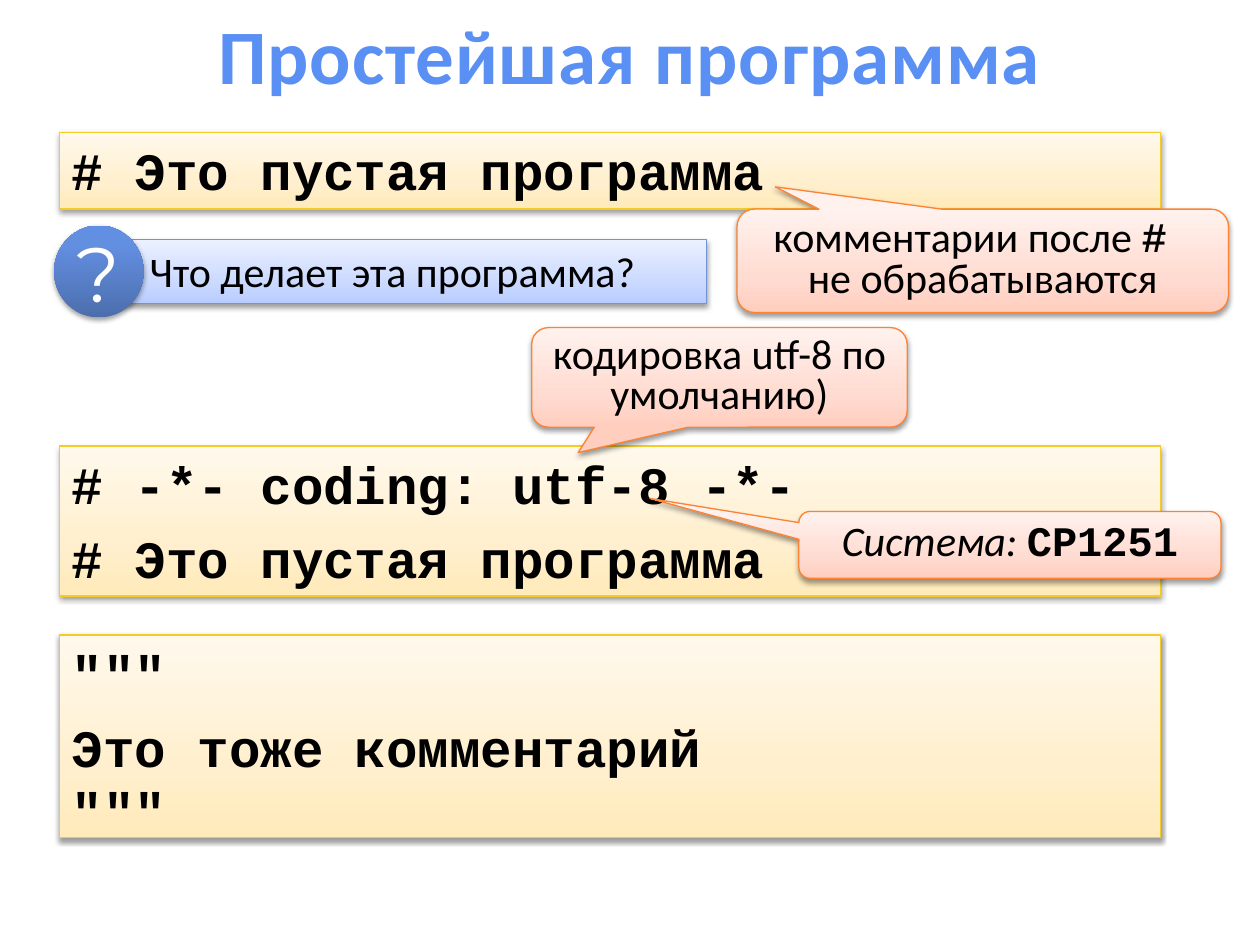
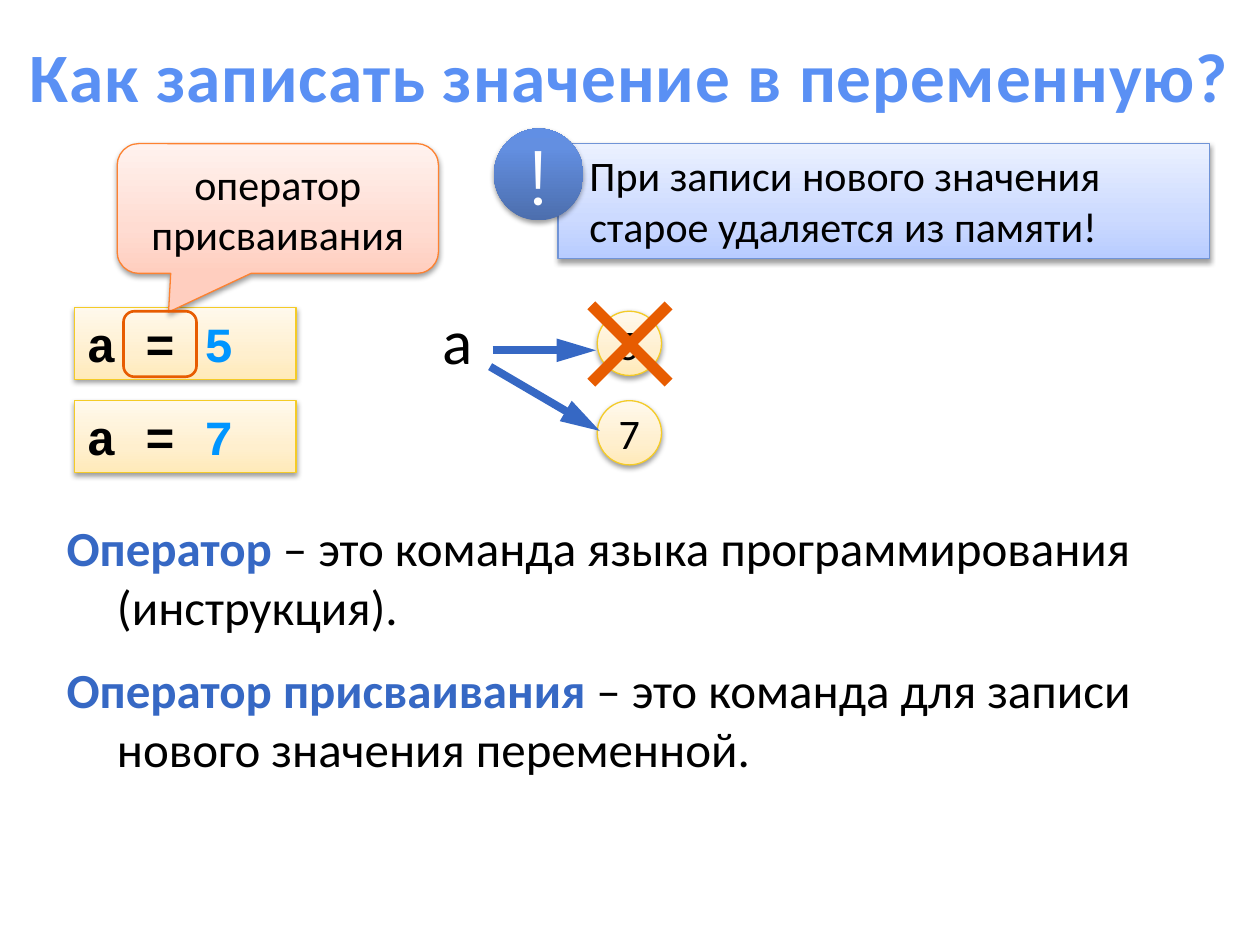
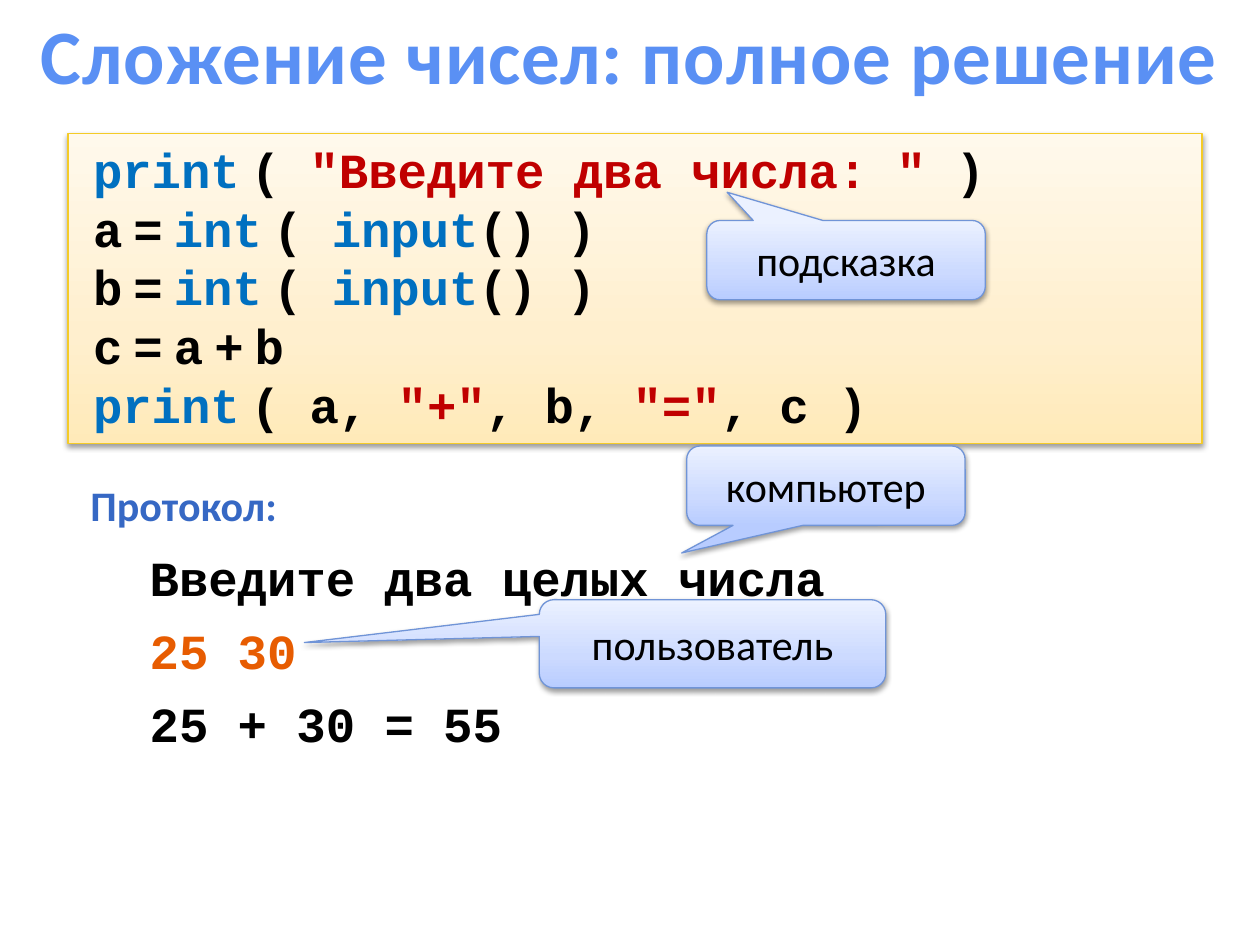
import dataclasses

import lxml.etree
import pptx
import pptx.dml.color
import pptx.enum.shapes
import pptx.enum.text
import pptx.oxml.ns
import pptx.util

Inches = pptx.util.Inches
Pt = pptx.util.Pt
qn = pptx.oxml.ns.qn
SHAPE = pptx.enum.shapes.MSO_SHAPE
ALIGN = pptx.enum.text.PP_ALIGN
ANCHOR = pptx.enum.text.MSO_ANCHOR


@dataclasses.dataclass(frozen=True)
class Theme:
    # Fonts
    body: str = "Calibri"
    code: str = "Courier New"
    badge: str = "Montserrat"
    # Type sizes
    title_size: float = 44
    code_size: float = 30
    text_size: float = 28
    note_size: float = 24
    variable_size: float = 36
    # Colours
    black: str = "000000"
    white: str = "FFFFFF"
    title: str = "5A90F4"
    accent: str = "3668C4"
    orange: str = "E75C01"
    number: str = "0095FF"
    keyword: str = "0070C0"
    string: str = "C00000"
    # Gradients run from bottom to top: (position, colour)
    yellow: tuple = ((0, "FFEAB9"), (35, "FFEFCE"), (100, "FFF9EC"))
    blue: tuple = ((0, "B8CCFF"), (35, "CCDAFF"), (100, "EBF1FF"))
    pink: tuple = ((0, "FFCEBF"), (35, "FFDCD2"), (100, "FFF2EE"))
    disc: tuple = ((0, "4C6EAD"), (80, "638FE1"), (100, "618FE4"))
    yellow_line: str = "F4CB27"
    blue_line: str = "7094D7"
    pink_line: str = "FD8231"


T = Theme()


def rgb(color):
    return pptx.dml.color.RGBColor.from_string(color)


def child(parent, tag, **attrs):
    return lxml.etree.SubElement(parent, qn(tag), {k: str(v) for k, v in attrs.items()})


def pick(values, i):
    """Value for paragraph i; the last one serves all that follow."""
    return values[min(i, len(values) - 1)]


def write(tf, paragraphs, align=ALIGN.LEFT, anchor=ANCHOR.TOP, wrap=True, gaps=(0,),
          margins=(0,), hanging=0, spacing=None, **fmt):
    """Each paragraph is a string or a list of runs: text or (text, format)."""
    tf.word_wrap = wrap
    tf.vertical_anchor = anchor
    for i, runs in enumerate(paragraphs):
        p = tf.paragraphs[0] if i == 0 else tf.add_paragraph()
        p.alignment = align
        p.space_before = Pt(pick(gaps, i))
        if spacing:
            p.line_spacing = spacing
        pPr = p._p.get_or_add_pPr()
        pPr.set("marL", str(Inches(pick(margins, i))))
        pPr.set("indent", str(Inches(-hanging)))
        for run in [runs] if isinstance(runs, str) else runs:
            text, own = (run, {}) if isinstance(run, str) else run
            look = {"font": T.body, "size": T.note_size, "color": T.black, **fmt, **own}
            for n, line in enumerate(text.split("\n")):
                if n:
                    p.add_line_break()
                if line:
                    r = p.add_run()
                    r.text = line
                    r.font.name = look["font"]
                    r.font.size = Pt(look["size"])
                    r.font.color.rgb = rgb(look["color"])
                    r.font.bold = look.get("bold", False)
                    r.font.italic = look.get("italic", False)
                    if "tracking" in look:
                        r._r.get_or_add_rPr().set("spc", str(look["tracking"]))


class Deck:
    def __init__(self):
        self.prs = pptx.Presentation()
        self.prs.slide_width, self.prs.slide_height = Inches(10), Inches(7.5)

    def slide(self, title, top=0, height=0.85, size=T.title_size):
        self.s = self.prs.slides.add_slide(self.prs.slide_layouts[6])
        self.text(0, top, 10, height, [title], align=ALIGN.CENTER, anchor=ANCHOR.MIDDLE,
                  size=size, color=T.title, bold=True, tracking=50)

    def text(self, x, y, w, h, paragraphs, **fmt):
        tb = self.s.shapes.add_textbox(Inches(x), Inches(y), Inches(w), Inches(h))
        write(tb.text_frame, paragraphs, **fmt)

    def shape(self, kind, x, y, w, h, fill=None, line=None, width=0.75, adj=()):
        sp = self.s.shapes.add_shape(kind, Inches(x), Inches(y), Inches(w), Inches(h))
        sp.shadow.inherit = False
        for i, value in enumerate(adj):
            sp.adjustments[i] = value
        if fill is None:
            sp.fill.background()
        elif isinstance(fill, str):
            sp.fill.solid()
            sp.fill.fore_color.rgb = rgb(fill)
        else:
            self.gradient(sp, fill)
        if line:
            sp.line.color.rgb = rgb(line)
            sp.line.width = Pt(width)
        else:
            sp.line.fill.background()
        return sp

    def gradient(self, sp, stops):
        """Vertical gradient with the soft shadow that goes with it."""
        sp.fill.gradient()
        sp.fill.gradient_angle = 90
        spPr = sp.element.spPr
        gsLst = spPr.find(".//" + qn("a:gsLst"))
        for gs in list(gsLst):
            gsLst.remove(gs)
        for pos, color in stops:
            child(child(gsLst, "a:gs", pos=pos * 1000), "a:srgbClr", val=color)
        shadow = child(spPr.find(qn("a:effectLst")), "a:outerShdw", blurRad=Pt(3.1),
                       dist=Pt(1.6), dir=5400000, rotWithShape=0)
        child(child(shadow, "a:srgbClr", val=T.black), "a:alpha", val=38000)

    def code(self, x, y, w, h, paragraphs, **fmt):
        sp = self.shape(SHAPE.RECTANGLE, x, y, w, h, T.yellow, T.yellow_line)
        write(sp.text_frame, paragraphs, font=T.code, bold=True, **fmt)

    def callout(self, x, y, w, h, tip, runs, fill=T.pink, line=T.pink_line, **fmt):
        sp = self.shape(SHAPE.ROUNDED_RECTANGULAR_CALLOUT, x, y, w, h, fill, line,
                        adj=(*tip, 0.167))
        write(sp.text_frame, [runs], align=ALIGN.CENTER, anchor=ANCHOR.MIDDLE, **fmt)

    def circle(self, x, y, w, h, label, fill, line=None, **fmt):
        sp = self.shape(SHAPE.OVAL, x, y, w, h, fill, line)
        write(sp.text_frame, [label], align=ALIGN.CENTER, anchor=ANCHOR.MIDDLE,
              wrap=False, **fmt)

    def notice(self, x, y, w, h, sign, text, disc_x, disc_y):
        sp = self.shape(SHAPE.RECTANGLE, x, y, w, h, T.blue, T.blue_line)
        write(sp.text_frame, [text], margins=(0.15,))
        self.circle(disc_x, disc_y, 0.71, 0.73, sign, T.disc, font=T.badge,
                    size=T.title_size, color=T.white)

    def arrow(self, x1, y1, x2, y2):
        cx = self.s.shapes.add_connector(pptx.enum.shapes.MSO_CONNECTOR.STRAIGHT,
                                         Inches(x1), Inches(y1), Inches(x2), Inches(y2))
        cx.line.color.rgb = rgb(T.accent)
        cx.line.width = Pt(4.5)
        child(cx.line._get_or_add_ln(), "a:tailEnd", type="triangle", w="med", len="lg")
        child(cx.element.spPr, "a:effectLst")


def simplest_program(d):
    d.slide("Простейшая программа")
    x, w = 0.47, 8.74
    comment = "# Это пустая программа"
    d.code(x, 1.05, w, 0.61, [comment], size=T.code_size, gaps=(6,))
    d.notice(0.94, 1.9, 4.67, 0.51, "?", "Что делает эта программа?", 0.43, 1.79)
    d.callout(5.85, 1.66, 3.9, 0.82, (-0.422, -0.716),
              ["комментарии после ", ("# \n", {"font": T.code, "bold": True}),
               "не обрабатываются"], spacing=0.8)

    # Encoding
    d.code(x, 3.54, w, 1.19, ["# -*- coding: utf-8 -*-", comment],
           size=T.code_size, gaps=(6,))
    d.callout(4.22, 2.6, 2.98, 0.79, (-0.376, 0.755),
              "кодировка utf-8 по умолчанию)", spacing=0.8)
    d.callout(6.34, 4.06, 3.35, 0.53, (-0.853, -0.695),
              [("Система: ", {"italic": True}),
               ("CP1251", {"font": T.code, "bold": True})], spacing=0.8)

    # Block comment
    d.code(x, 5.04, w, 1.61, ['"""', "Это тоже комментарий", '"""'],
           size=T.code_size, gaps=(0, 6, 0))


def assignment(d):
    d.slide("Как записать значение в переменную?", top=0.33, height=0.52, size=39.6)

    # Assignments and the values they store
    for value, code_y, value_y in (("5", 2.44, 2.47), ("7", 3.18, 3.18)):
        d.code(0.59, code_y, 1.76, 0.57, [["a = ", (value, {"color": T.number})]],
               size=T.text_size, gaps=(5,))
        d.circle(4.74, value_y, 0.51, 0.51, value, T.yellow, T.yellow_line)
    d.callout(0.93, 1.14, 2.55, 1.03, (-0.34, 0.798), "оператор присваивания")
    d.shape(SHAPE.ROUNDED_RECTANGLE, 0.98, 2.47, 0.58, 0.52, line=T.orange, width=1.5)
    d.notice(4.43, 1.14, 5.17, 0.91, "!",
             "При записи нового значения\nстарое удаляется из памяти!", 3.92, 1.02)

    # Variable, arrows and the crossed-out value
    d.text(3.34, 2.39, 0.58, 0.6, ["a"], align=ALIGN.CENTER, anchor=ANCHOR.MIDDLE,
           wrap=False, size=T.variable_size)
    d.arrow(3.91, 2.78, 4.73, 2.78)
    d.arrow(3.89, 2.91, 4.76, 3.42)
    cross = d.shape(SHAPE.MATH_PLUS, 4.41, 2.14, 1.18, 1.18, T.orange, adj=(0.075,))
    cross.rotation = 315

    # Definitions
    term = {"color": T.accent, "bold": True}
    d.text(0.43, 4.06, 9.42, 2.22,
           [[("Оператор", term), " – это команда языка программирования (инструкция)."],
            [("Оператор присваивания ", term),
             "– это команда для записи нового значения переменной."]],
           size=T.text_size, gaps=(0, 14), margins=(0.4,), hanging=0.4)


def adding_numbers(d):
    d.slide("Сложение чисел: полное решение")

    # Program
    keyword, string = {"color": T.keyword}, {"color": T.string}
    narrow = (" ", {"font": T.body})

    def read_number(name):
        return [name, narrow, "=", narrow, ("int", keyword), narrow, "( ",
                ("input", keyword), "() )"]

    d.code(0.54, 1.06, 9, 2.46,
           [[("print", keyword), narrow, "( ", ('"Введите два числа: "', string), " )"],
            read_number("a"),
            read_number("b"),
            ["c", narrow, "=", narrow, "a", narrow, "+", narrow, "b"],
            [("print", keyword), narrow, "( a, ", ('"+"', string), ", b, ",
             ('"="', string), ", c )"]],
           size=T.text_size, gaps=(4, 0), margins=(0.1,), spacing=Pt(33.5))

    # Protocol
    d.text(0.62, 3.76, 9.06, 2.18,
           [[("Протокол:", {"font": T.body, "size": T.note_size, "color": T.accent})],
            "Введите два целых числа",
            [("25 30", {"color": T.orange})],
            "25 + 30 = 55"],
           font=T.code, size=T.text_size, bold=True, gaps=(0, 10, 8), margins=(0, 0.47))

    # Who prints what
    for x, y, w, h, tip, label in (
            (5.45, 3.54, 2.21, 0.63, (-0.518, 0.848), "компьютер"),
            (4.28, 4.76, 2.75, 0.7, (-1.178, -0.014), "пользователь"),
            (5.61, 1.75, 2.21, 0.63, (-0.427, -0.855), "подсказка")):
        d.callout(x, y, w, h, tip, label, T.blue, T.blue_line)


def main():
    d = Deck()
    simplest_program(d)
    assignment(d)
    adding_numbers(d)
    d.prs.save("out.pptx")


if __name__ == "__main__":
    main()
